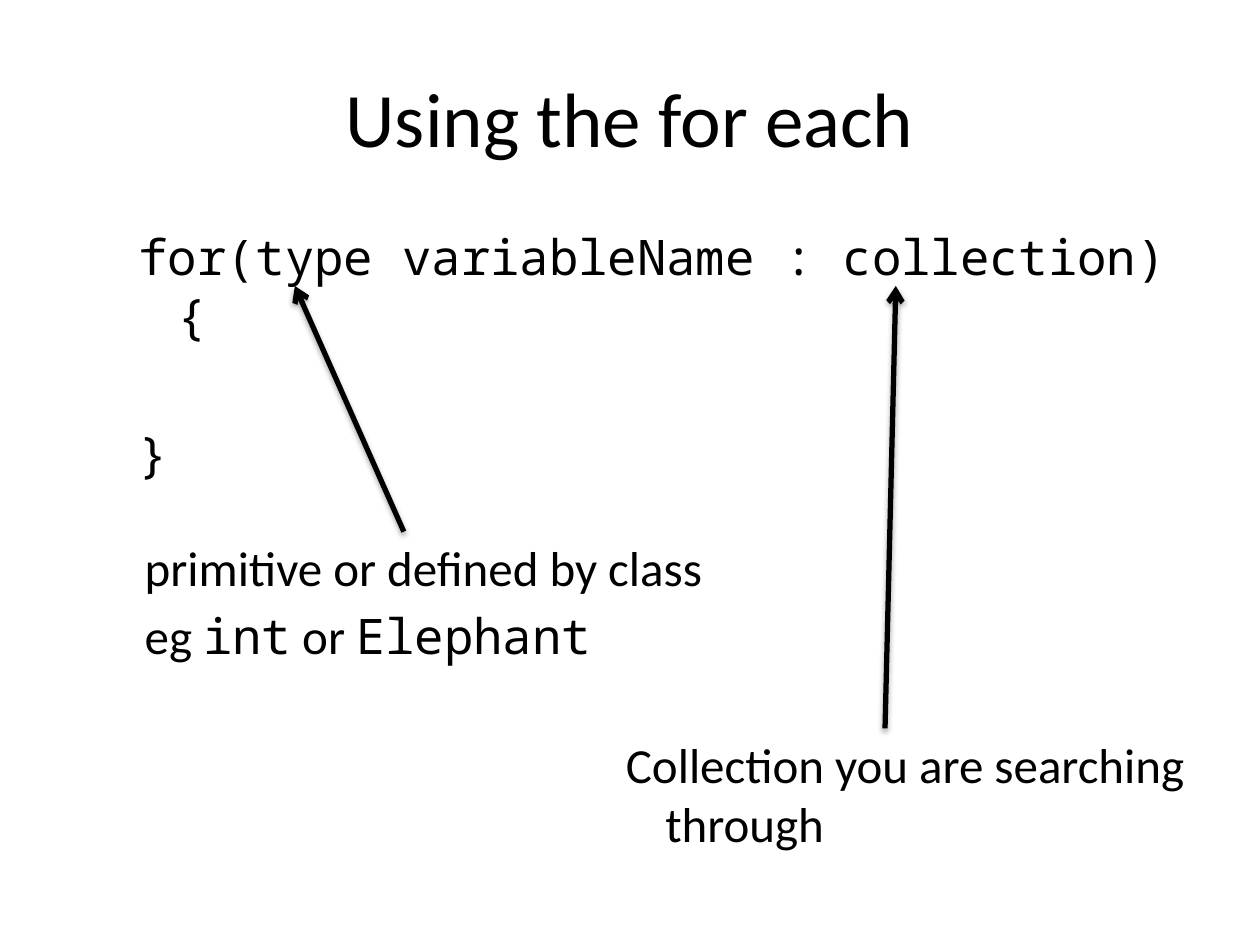
import pptx
import pptx.dml.color
import pptx.enum.shapes
import pptx.enum.text
import pptx.oxml
import pptx.oxml.ns
import pptx.util

Pt = pptx.util.Pt
COLORS = {"ink": "000000", "paper": "FFFFFF"}
PROSE, CODE = "Calibri", "Noto Sans Mono"
LINE_GAP, BLOCK_GAP = 5, 45


def color(name):
    return pptx.dml.color.RGBColor.from_string(COLORS[name])


def add_span(para, text, face, size):
    span = para.add_run()
    span.text = text
    span.font.name = face
    span.font.size = Pt(size)
    span.font.color.rgb = color("ink")


def place_title(page, box, text):
    title = page.shapes.title
    title.left, title.top, title.width, title.height = map(Pt, box)
    frame = title.text_frame
    frame.vertical_anchor = pptx.enum.text.MSO_ANCHOR.MIDDLE
    para = frame.paragraphs[0]
    para.alignment = pptx.enum.text.PP_ALIGN.CENTER
    add_span(para, text, PROSE, 44)


def place_text(page, box, lines, gap=LINE_GAP, grow=True):
    shape = page.shapes.add_textbox(*map(Pt, box))
    frame = shape.text_frame
    frame.word_wrap = True
    if grow:
        frame.auto_size = pptx.enum.text.MSO_AUTO_SIZE.SHAPE_TO_FIT_TEXT
    for index, spans in enumerate(lines):
        para = frame.add_paragraph() if index else frame.paragraphs[0]
        if index:
            para.space_before = Pt(gap)
        properties = para._p.get_or_add_pPr()
        properties.set("marL", str(Pt(58.5)))
        properties.set("indent", str(Pt(-22.5)))
        for text, face in spans:
            add_span(para, text, face, 28)
    return shape


def place_arrow(page, note, tip):
    arrow = page.shapes.add_connector(
        pptx.enum.shapes.MSO_CONNECTOR.STRAIGHT, note.left, note.top, *map(Pt, tip)
    )
    arrow.begin_connect(note, 0)
    arrow.line.color.rgb = color("ink")
    arrow.line.width = Pt(3)
    outline = arrow.line._get_or_add_ln()
    outline.append(pptx.oxml.parse_xml(
        f'<a:tailEnd {pptx.oxml.ns.nsdecls("a")} type="arrow"/>'
    ))
    arrow._element.spPr.append(pptx.oxml.parse_xml(
        f'<a:effectLst {pptx.oxml.ns.nsdecls("a")}>'
        f'<a:outerShdw blurRad="{Pt(3.1)}" dist="{Pt(1.8)}" dir="5400000" rotWithShape="0">'
        f'<a:srgbClr val="{COLORS["ink"]}"><a:alpha val="35000"/></a:srgbClr>'
        '</a:outerShdw></a:effectLst>'
    ))


def main():
    deck = pptx.Presentation()
    deck.slide_width, deck.slide_height = Pt(720), Pt(540)
    page = deck.slides.add_slide(deck.slide_layouts[5])
    page.background.fill.solid()
    page.background.fill.fore_color.rgb = color("paper")

    place_title(page, (36, 21.6, 648, 90), "Using the for each")
    place_text(
        page,
        (36, 126, 648, 356.4),
        [[("for(type variableName : collection){", CODE)], [("}", CODE)]],
        gap=BLOCK_GAP,
        grow=False,
    )
    type_note = place_text(
        page,
        (39.6, 303.8, 382.3, 82),
        [
            [("primitive or defined by class", PROSE)],
            [("eg ", PROSE), ("int", CODE), (" or ", PROSE), ("Elephant", CODE)],
        ],
    )
    place_arrow(page, type_note, (168.5, 163.4))
    collection_note = place_text(
        page,
        (314.6, 416.2, 382.3, 75),
        [[("Collection you are searching through", PROSE)]],
    )
    place_arrow(page, collection_note, (511.9, 163.4))
    deck.save("out.pptx")


if __name__ == "__main__":
    main()
